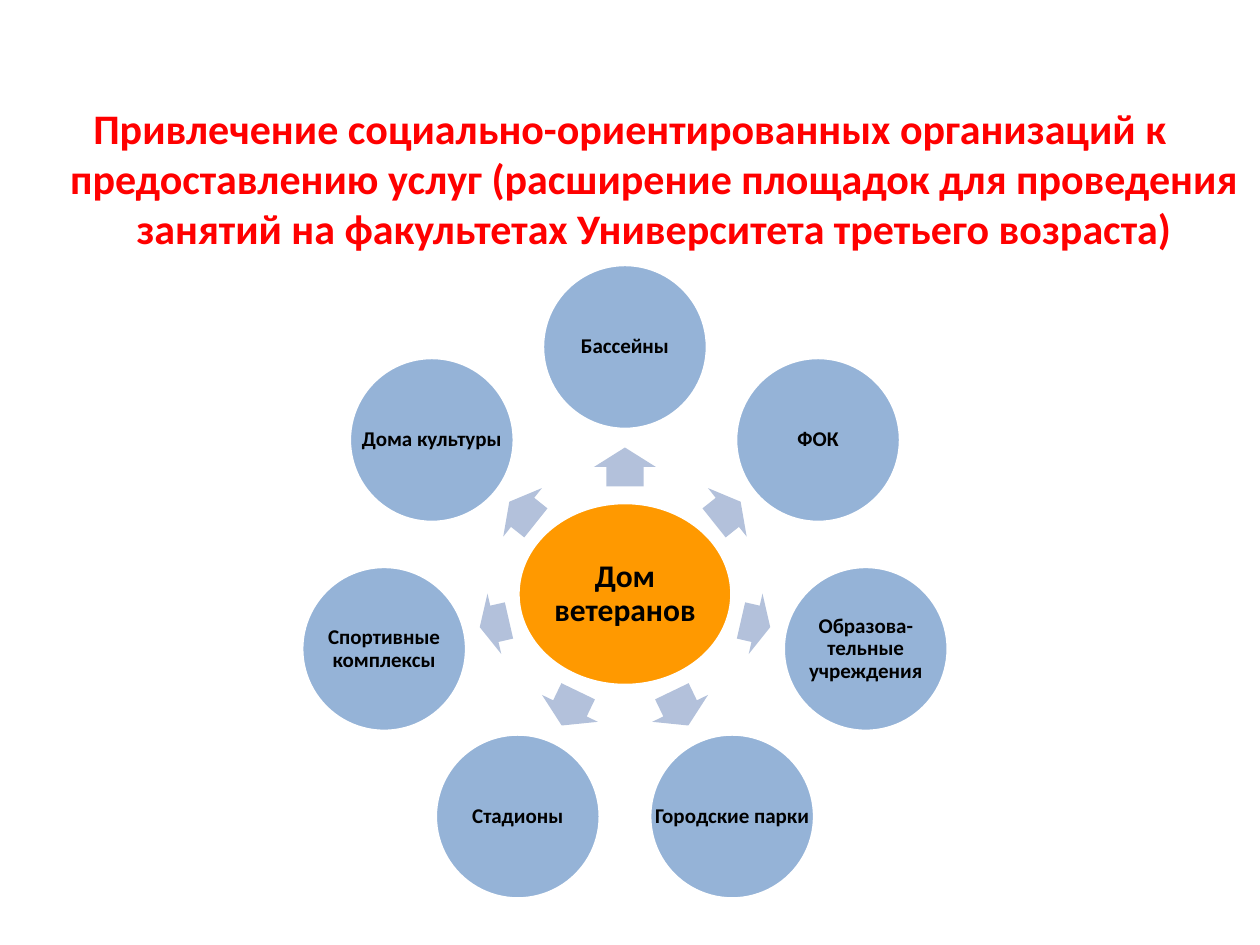
from math import cos, radians, sin

from pptx import Presentation
from pptx.dml.color import RGBColor
from pptx.enum.shapes import MSO_SHAPE
from pptx.enum.text import MSO_ANCHOR, PP_ALIGN
from pptx.util import Pt

# Content
TITLE = ("Привлечение социально-ориентированных организаций к предоставлению услуг "
         "(расширение площадок для проведения занятий на факультетах "
         "Университета третьего возраста)")
HUB = "Дом ветеранов"
PARTNERS = [  # clockwise from the top
    "Бассейны",
    "ФОК",
    "Образова-тельные учреждения",
    "Городские парки",
    "Стадионы",
    "Спортивные комплексы",
    "Дома культуры",
]

# Style
FONT = "Calibri"
RED = RGBColor(0xFF, 0x00, 0x00)
BLACK = RGBColor(0x00, 0x00, 0x00)
WHITE = RGBColor(0xFF, 0xFF, 0xFF)
ORANGE = RGBColor(0xFF, 0x99, 0x00)
BLUE = RGBColor(0x95, 0xB3, 0xD7)
PALE_BLUE = RGBColor(0xB3, 0xC1, 0xDB)
ELLIPSE = MSO_SHAPE.OVAL
ARROW = MSO_SHAPE.RIGHT_ARROW
MIDDLE = MSO_ANCHOR.MIDDLE
CENTER = PP_ALIGN.CENTER

# Geometry in px
PX = 914400 / 126
CENTER_X, CENTER_Y = 625, 594
HUB_W, HUB_H = 214, 183
PARTNER_SIZE = 165
RING_RADIUS = 247
ARROW_BREADTH = 62
# (distance from centre, length) by number of steps from the top
ARROWS = [(127, 39), (131, 34), (134, 30), (127, 38)]


def emu(px):
    return round(px * PX)


def box_around(x, y, width, height):
    return [emu(v) for v in (x - width / 2, y - height / 2, width, height)]


def add_filled(slide, kind, box, color):
    shape = slide.shapes.add_shape(kind, *box)
    shape.shadow.inherit = False
    shape.fill.solid()
    shape.fill.fore_color.rgb = color
    shape.line.fill.background()
    return shape


def add_text(slide, box, text, size, color):
    textbox = slide.shapes.add_textbox(*box)
    frame = textbox.text_frame
    frame.word_wrap = True
    frame.text = text
    paragraph = frame.paragraphs[0]
    paragraph.alignment = CENTER
    font = paragraph.runs[0].font
    font.name, font.size, font.bold = FONT, Pt(size), True
    font.color.rgb = color
    return frame


def add_circle(slide, box, color, text, size, side_inset):
    circle = add_filled(slide, ELLIPSE, box, color)
    circle.line.color.rgb = WHITE
    circle.line.width = Pt(2)
    # The label spans the full circle, wider than the ellipse's own text area
    frame = add_text(slide, box, text, size, BLACK)
    frame.vertical_anchor = MIDDLE
    frame.margin_left = frame.margin_right = emu(side_inset)
    frame.margin_top = frame.margin_bottom = emu(3)
    frame.paragraphs[0].line_spacing = 0.9


def main():
    prs = Presentation()
    prs.slide_width, prs.slide_height = emu(1260), emu(945)
    slide = prs.slides.add_slide(prs.slide_layouts[6])

    # Hub
    add_circle(slide, box_around(CENTER_X, CENTER_Y, HUB_W, HUB_H),
               ORANGE, HUB, 18, 20)

    # Ring of partners, each with an arrow from the hub
    count = len(PARTNERS)
    for i, partner in enumerate(PARTNERS):
        angle = 360 * i / count - 90
        dx, dy = cos(radians(angle)), sin(radians(angle))
        distance, length = ARROWS[min(i, count - i)]

        arrow = add_filled(
            slide, ARROW,
            box_around(CENTER_X + distance * dx, CENTER_Y + distance * dy,
                       length, ARROW_BREADTH),
            PALE_BLUE)
        arrow.adjustments[0] = 0.6
        arrow.adjustments[1] = 0.5
        arrow.rotation = angle % 360

        add_circle(
            slide,
            box_around(CENTER_X + RING_RADIUS * dx, CENTER_Y + RING_RADIUS * dy,
                       PARTNER_SIZE, PARTNER_SIZE),
            BLUE, partner, 12, 2)

    # Title with a hanging indent
    title_box = [emu(v) for v in (0, 96, 1260, 149)]
    title = add_text(slide, title_box, TITLE, 24, RED)
    properties = title.paragraphs[0]._p.get_or_add_pPr()
    properties.set("marL", str(emu(48)))
    properties.set("indent", str(-emu(48)))

    prs.save("out.pptx")


if __name__ == "__main__":
    main()
